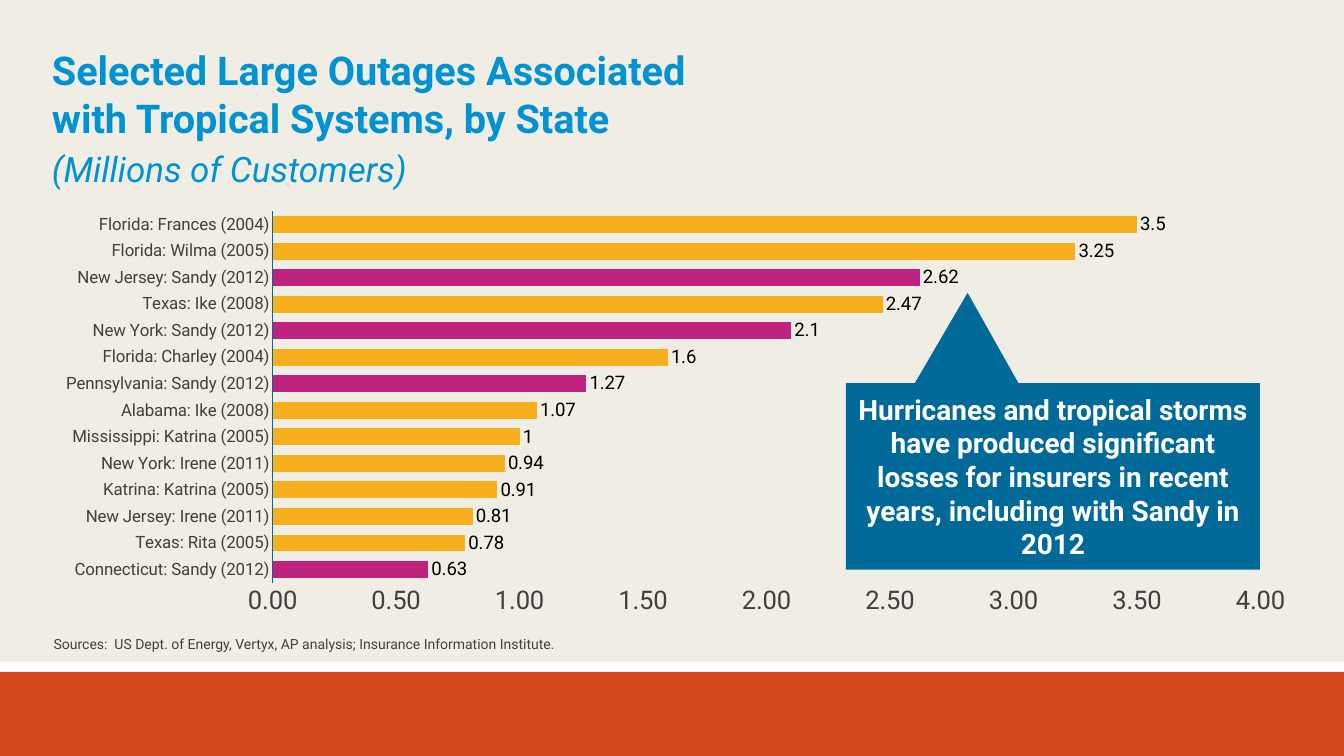
"""Build the slide on large power outages caused by tropical systems."""
from dataclasses import dataclass

from lxml.etree import SubElement
from pptx import Presentation
from pptx.chart.chart import Chart
from pptx.chart.data import CategoryChartData
from pptx.dml.color import RGBColor
from pptx.enum.chart import XL_CHART_TYPE, XL_LABEL_POSITION, XL_TICK_MARK
from pptx.enum.shapes import MSO_SHAPE
from pptx.enum.text import MSO_ANCHOR, PP_ALIGN
from pptx.oxml.ns import qn
from pptx.shapes.autoshape import Shape
from pptx.slide import Slide
from pptx.text.text import Font
from pptx.util import Inches, Pt

COLORS = {
    "band": "D7471F", "panel": "F0EDE4", "title": "0092D1", "navy": "016A99",
    "bar": "F7AF1E", "sandy": "BE237D", "text": "404040", "label": "000000",
    "white": "FFFFFF",
}
TYPEFACE = "Roboto"


@dataclass(frozen=True)
class Frame:
    left: float
    top: float
    width: float
    height: float

    def lengths(self) -> tuple[int, ...]:
        return tuple(Inches(n) for n in (self.left, self.top, self.width, self.height))


@dataclass(frozen=True)
class Block:
    frame: Frame
    lines: tuple[str, ...]
    size: int
    color: str
    bold: bool = False
    italic: bool = False
    wrap: bool = True
    anchor: MSO_ANCHOR = MSO_ANCHOR.TOP


@dataclass(frozen=True)
class Panel:
    frame: Frame
    color: str
    kind: MSO_SHAPE = MSO_SHAPE.RECTANGLE


@dataclass(frozen=True)
class Outage:
    state: str
    storm: str
    year: int
    millions: float

    def label(self) -> str:
        return f"{self.state}: {self.storm} ({self.year})"


BACKDROP = (
    Panel(Frame(0, 8, 16, 1), "band"),
    Panel(Frame(0, 0, 16, 7.88), "panel"),
)
CALLOUT = Panel(Frame(10.07, 4.56, 4.93, 2.22), "navy", MSO_SHAPE.RECTANGULAR_CALLOUT)
CALLOUT_TEXT = Block(
    CALLOUT.frame,
    ("Hurricanes and tropical storms have produced significant losses for insurers "
     "in recent years, including with Sandy in 2012",),
    24, "white", bold=True, anchor=MSO_ANCHOR.MIDDLE,
)
BLOCKS = (
    Block(Frame(0.52, 0.49, 14.81, 1.25),
          ("Selected Large Outages Associated", "with Tropical Systems, by State"),
          34, "title", bold=True, anchor=MSO_ANCHOR.MIDDLE),
    Block(Frame(0.52, 1.71, 4.5, 0.61), ("(Millions of Customers)",),
          30, "title", italic=True, wrap=False),
    Block(Frame(0.54, 7.31, 6.32, 0.5),
          ("Sources:  US Dept. of Energy, Vertyx, AP analysis; "
           "Insurance Information Institute.",),
          12, "text", wrap=False, anchor=MSO_ANCHOR.BOTTOM),
)
CHART_FRAME = Frame(0.63, 2.49, 14.67, 5.34)
PLOT_AREA = {"x": 0.179, "y": 0.005, "w": 0.805, "h": 0.828}
OUTAGES = (
    Outage("Connecticut", "Sandy", 2012, 0.63),
    Outage("Texas", "Rita", 2005, 0.78),
    Outage("New Jersey", "Irene", 2011, 0.81),
    Outage("Katrina", "Katrina", 2005, 0.91),
    Outage("New York", "Irene", 2011, 0.94),
    Outage("Mississippi", "Katrina", 2005, 1),
    Outage("Alabama", "Ike", 2008, 1.07),
    Outage("Pennsylvania", "Sandy", 2012, 1.27),
    Outage("Florida", "Charley", 2004, 1.6),
    Outage("New York", "Sandy", 2012, 2.1),
    Outage("Texas", "Ike", 2008, 2.47),
    Outage("New Jersey", "Sandy", 2012, 2.62),
    Outage("Florida", "Wilma", 2005, 3.25),
    Outage("Florida", "Frances", 2004, 3.5),
)


def color_of(name: str) -> RGBColor:
    return RGBColor.from_string(COLORS[name])


def style_font(font: Font, size: float, color: str) -> None:
    font.name = TYPEFACE
    font.size = Pt(size)
    font.color.rgb = color_of(color)


def draw_panel(page: Slide, panel: Panel) -> Shape:
    shape = page.shapes.add_shape(panel.kind, *panel.frame.lengths())
    shape.shadow.inherit = False
    shape.fill.solid()
    shape.fill.fore_color.rgb = color_of(panel.color)
    shape.line.fill.background()
    return shape


def write_block(box: Shape, block: Block, align: PP_ALIGN = PP_ALIGN.LEFT) -> None:
    frame = box.text_frame
    frame.word_wrap = block.wrap
    frame.vertical_anchor = block.anchor
    para = frame.paragraphs[0]
    para.alignment = align
    for index, line in enumerate(block.lines):
        if index:
            para.add_line_break()
        span = para.add_run()
        span.text = line
        style_font(span.font, block.size, block.color)
        span.font.bold = block.bold
        span.font.italic = block.italic


def draw_callout(page: Slide) -> None:
    shape = draw_panel(page, CALLOUT)
    shape.adjustments[0] = -0.206
    shape.adjustments[1] = -0.984
    frame = shape.text_frame
    frame.margin_left = frame.margin_right = Inches(0.13)
    frame.margin_top = frame.margin_bottom = Inches(0.1)
    write_block(shape, CALLOUT_TEXT, PP_ALIGN.CENTER)


def place_plot_area(chart: Chart) -> None:
    plot_area = chart.plots[0]._element.getparent()
    for old in plot_area.findall(qn("c:layout")):
        plot_area.remove(old)
    layout = SubElement(plot_area, qn("c:layout"))
    plot_area.insert(0, layout)
    manual = SubElement(layout, qn("c:manualLayout"))
    settings = {"layoutTarget": "inner", "xMode": "edge", "yMode": "edge", **PLOT_AREA}
    for tag, value in settings.items():
        SubElement(manual, qn(f"c:{tag}")).set("val", str(value))


def style_axes(chart: Chart) -> None:
    for axis, size in ((chart.category_axis, 14.5), (chart.value_axis, 22)):
        axis.major_tick_mark = axis.minor_tick_mark = XL_TICK_MARK.NONE
        axis.has_major_gridlines = False
        style_font(axis.tick_labels.font, size, "text")
    line = chart.category_axis.format.line
    line.color.rgb = color_of("navy")
    line.width = Pt(0.75)
    values = chart.value_axis
    values.minimum_scale, values.maximum_scale, values.major_unit = 0, 4, 0.5
    values.tick_labels.number_format = "#,##0.00"
    values.tick_labels.number_format_is_linked = False
    values.format.line.fill.background()


def draw_chart(page: Slide) -> None:
    data = CategoryChartData()
    data.categories = [outage.label() for outage in OUTAGES]
    data.add_series("Series 1", [outage.millions for outage in OUTAGES])
    chart = page.shapes.add_chart(
        XL_CHART_TYPE.BAR_CLUSTERED, *CHART_FRAME.lengths(), data).chart
    chart.has_title = chart.has_legend = False
    style_font(chart.font, 18, "text")
    style_axes(chart)
    place_plot_area(chart)
    plot = chart.plots[0]
    plot.vary_by_categories = False
    plot.gap_width, plot.overlap = 58, 41
    series = plot.series[0]
    series.format.fill.solid()
    series.format.fill.fore_color.rgb = color_of("bar")
    for index, outage in enumerate(OUTAGES):
        if outage.storm == "Sandy":
            fill = series.points[index].format.fill
            fill.solid()
            fill.fore_color.rgb = color_of("sandy")
    labels = series.data_labels
    labels.show_value = True
    labels.position = XL_LABEL_POSITION.OUTSIDE_END
    style_font(labels.font, 16, "label")


def main() -> None:
    deck = Presentation()
    deck.slide_width, deck.slide_height = Inches(16), Inches(9)
    page = deck.slides.add_slide(deck.slide_layouts[6])
    for panel in BACKDROP:
        draw_panel(page, panel)
    draw_chart(page)
    for block in BLOCKS:
        write_block(page.shapes.add_textbox(*block.frame.lengths()), block)
    draw_callout(page)
    deck.save("out.pptx")


if __name__ == "__main__":
    main()
